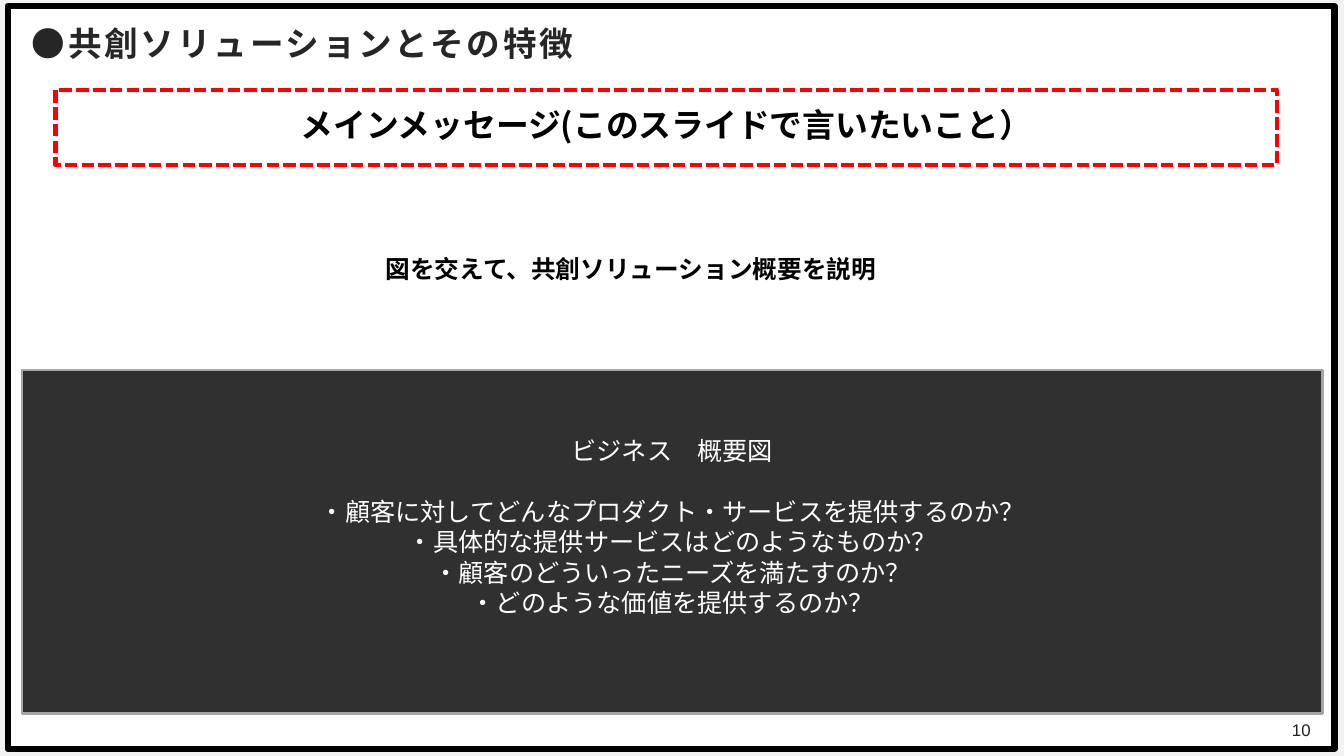
from lxml import etree
from pptx import Presentation
from pptx.dml.color import RGBColor
from pptx.enum.dml import MSO_LINE
from pptx.enum.shapes import MSO_SHAPE
from pptx.enum.text import MSO_ANCHOR, MSO_AUTO_SIZE, PP_ALIGN
from pptx.oxml.ns import qn
from pptx.util import Cm, Pt

RECTANGLE = MSO_SHAPE.RECTANGLE
DASHED = MSO_LINE.SQUARE_DOT
MIDDLE = MSO_ANCHOR.MIDDLE
NO_FIT = MSO_AUTO_SIZE.NONE
LEFT, CENTER, RIGHT = PP_ALIGN.LEFT, PP_ALIGN.CENTER, PP_ALIGN.RIGHT

JAPANESE_FONT = "Noto Sans CJK JP"
LATIN_FONT = "Arial"
TITLE = "●共創ソリューションとその特徴"
MESSAGE = "メインメッセージ(このスライドで言いたいこと）"
SUMMARY = "図を交えて、共創ソリューション概要を説明"
OVERVIEW = [
    "ビジネス　概要図",
    "・顧客に対してどんなプロダクト・サービスを提供するのか？",
    "・具体的な提供サービスはどのようなものか？",
    "・顧客のどういったニーズを満たすのか？",
    "・どのような価値を提供するのか？",
]


def color(value):
    return RGBColor.from_string(value)


def place(shape, left, top, width, height):
    shape.left, shape.top = Cm(left), Cm(top)
    shape.width, shape.height = Cm(width), Cm(height)


def write(shape, lines, size, font_name, font_color, align=LEFT, bold=False,
          line_spacing=1.0, letter_spacing=0):
    frame = shape.text_frame
    frame.text = "\n".join(lines)
    frame.word_wrap = True
    frame.auto_size = NO_FIT
    frame.vertical_anchor = MIDDLE
    for para in frame.paragraphs:
        para.alignment = align
        para.line_spacing = line_spacing
        font = para.font
        font.name, font.size, font.bold = font_name, Pt(size), bold
        font.color.rgb = color(font_color)
        properties = para._p.pPr.find(qn("a:defRPr"))
        etree.SubElement(properties, qn("a:ea")).set("typeface", font_name)
        properties.set("spc", str(letter_spacing * 100))
    return frame


def add_box(page, bounds, fill, line, width, opacity=100):
    box = page.shapes.add_shape(RECTANGLE, *map(Cm, bounds))
    box.shadow.inherit = False
    box.line.color.rgb = color(line)
    box.line.width = Pt(width)
    if fill is None:
        box.fill.background()
        return box
    box.fill.solid()
    box.fill.fore_color.rgb = color(fill)
    if opacity < 100:
        tint = box._element.spPr.find(qn("a:solidFill"))[0]
        etree.SubElement(tint, qn("a:alpha")).set("val", str(opacity * 1000))
    return box


def add_label(page, bounds, text, *style, **options):
    label = page.shapes.add_textbox(*map(Cm, bounds))
    write(label, [text], *style, **options)


def add_title(page):
    title = page.shapes.title
    place(title, 0.3, 0.28, 20.7, 1.73)
    frame = write(title, [TITLE], 24, JAPANESE_FONT, "262626", bold=True,
                  line_spacing=0.9, letter_spacing=2)
    frame.margin_left = frame.margin_right = Cm(0.5)
    frame.margin_top = frame.margin_bottom = Cm(0.5)


def add_overview(page):
    panel = add_box(page, (0.56, 9.32, 32.77, 8.66), "000000", "A6A6A6", 1.5, opacity=81)
    frame = write(panel, OVERVIEW, 18, LATIN_FONT, "FFFFFF", CENTER)
    frame.paragraphs[0].space_after = Pt(22)
    frame.margin_bottom = Cm(0.9)


def main():
    deck = Presentation()
    deck.slide_width, deck.slide_height = Cm(33.87), Cm(19.05)
    page = deck.slides.add_slide(deck.slide_layouts[5])
    page.background.fill.solid()
    page.background.fill.fore_color.rgb = color("F2F2F2")

    border = add_box(page, (0.2, 0.15, 33.43, 18.72), "FFFFFF", "000000", 4.5)
    page.shapes.title._element.addprevious(border._element)
    add_title(page)
    add_label(page, (9.47, 4.37, 14.94, 4.9), SUMMARY, 17.6, JAPANESE_FONT, "000000",
              bold=True, line_spacing=0.9)
    add_overview(page)
    add_label(page, (31.17, 18.19, 2.11, 0.38), "10", 12, LATIN_FONT, "1F2021", RIGHT)
    message = add_box(page, (1.4, 2.26, 30.78, 1.9), None, "FF0000", 3)
    message.line.dash_style = DASHED
    write(message, [MESSAGE], 23.4, JAPANESE_FONT, "000000", CENTER, bold=True, line_spacing=0.9)
    deck.save("out.pptx")


if __name__ == "__main__":
    main()
